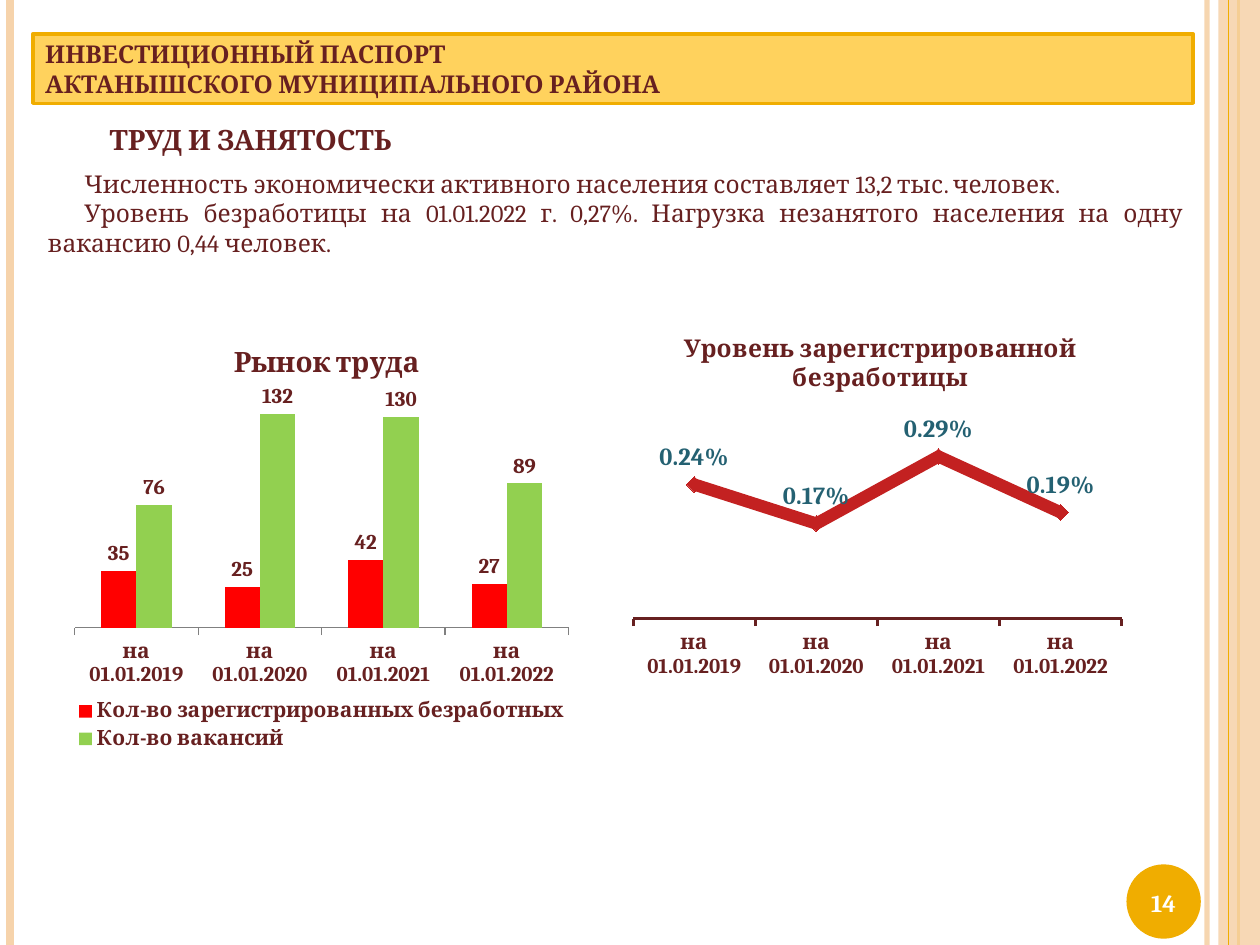
from dataclasses import dataclass

from lxml import etree
from pptx import Presentation
from pptx.chart.data import CategoryChartData
from pptx.dml.color import RGBColor
from pptx.enum.chart import XL_CHART_TYPE, XL_LABEL_POSITION, XL_LEGEND_POSITION, XL_MARKER_STYLE, XL_TICK_MARK
from pptx.enum.shapes import MSO_CONNECTOR, MSO_SHAPE
from pptx.enum.text import MSO_ANCHOR, MSO_AUTO_SIZE, PP_ALIGN
from pptx.oxml.ns import qn
from pptx.util import Inches, Pt

COLUMNS = XL_CHART_TYPE.COLUMN_CLUSTERED
LINE = XL_CHART_TYPE.LINE_MARKERS
OUTSIDE = XL_LABEL_POSITION.OUTSIDE_END
ABOVE = XL_LABEL_POSITION.ABOVE
BOTTOM = XL_LEGEND_POSITION.BOTTOM
DIAMOND = XL_MARKER_STYLE.DIAMOND
TICK_OUT = XL_TICK_MARK.OUTSIDE
STRAIGHT = MSO_CONNECTOR.STRAIGHT
RECTANGLE = MSO_SHAPE.RECTANGLE
OVAL = MSO_SHAPE.OVAL
TOP = MSO_ANCHOR.TOP
MIDDLE = MSO_ANCHOR.MIDDLE
NO_FIT = MSO_AUTO_SIZE.NONE
LEFT = PP_ALIGN.LEFT
CENTER = PP_ALIGN.CENTER
JUSTIFY = PP_ALIGN.JUSTIFY


@dataclass(frozen=True)
class Theme:
    font: str = "Cambria"
    text: str = "672020"
    gold: str = "F0AD00"
    banner: str = "FFD25D"
    peach: str = "F6D3AB"
    white: str = "FFFFFF"
    axis: str = "808080"
    unemployed: str = "FF0000"
    vacancies: str = "92D050"
    rate: str = "C32121"
    rate_label: str = "246172"
    heading_size: float = 16
    body_size: float = 14
    chart_size: float = 12


class SlideBuilder:
    def __init__(self, slide, theme):
        self.slide = slide
        self.theme = theme

    def style_font(self, font, size, color, bold=True):
        font.name = self.theme.font
        font.size = Pt(size)
        font.bold = bold
        font.color.rgb = RGBColor.from_string(color)

    def set_alpha(self, element, percent):
        color = element.find(".//" + qn("a:srgbClr"))
        etree.SubElement(color, qn("a:alpha")).set("val", str(percent * 1000))

    def vertical_line(self, x, color, width, alpha=100):
        line = self.slide.shapes.add_connector(STRAIGHT, Inches(x), 0, Inches(x), Inches(7.5))
        line.line.color.rgb = RGBColor.from_string(color)
        line.line.width = Pt(width)
        properties = line._element.spPr
        if alpha < 100:
            self.set_alpha(properties, alpha)
        etree.SubElement(properties, qn("a:effectLst"))

    def shape(self, kind, frame, fill, outline=None, alpha=100):
        shape = self.slide.shapes.add_shape(kind, *map(Inches, frame))
        shape.shadow.inherit = False
        shape.fill.solid()
        shape.fill.fore_color.rgb = RGBColor.from_string(fill)
        if alpha < 100:
            self.set_alpha(shape._element.spPr, alpha)
        if outline:
            shape.line.color.rgb = RGBColor.from_string(outline)
            shape.line.width = Pt(2)
        else:
            shape.line.fill.background()
        return shape

    def text_box(self, frame):
        return self.slide.shapes.add_textbox(*map(Inches, frame))

    def place(self, placeholder, frame):
        placeholder.left, placeholder.top, placeholder.width, placeholder.height = map(Inches, frame)
        return placeholder

    def set_text(self, box, text, size, color, bold=True, align=LEFT, anchor=MIDDLE, indent=0):
        frame = box.text_frame
        frame.text = text
        frame.word_wrap = True
        frame.auto_size = NO_FIT
        frame.vertical_anchor = anchor
        for para in frame.paragraphs:
            para.alignment = align
            para.space_before = Pt(0)
            properties = para._p.get_or_add_pPr()
            properties.set("marL", "0")
            properties.set("indent", str(Inches(indent)))
            etree.SubElement(properties, qn("a:buNone"))
            for span in para.runs:
                self.style_font(span.font, size, color, bold)

    def set_layout(self, parent, position, bounds, inner=False):
        for old in parent.findall(qn("c:layout")):
            parent.remove(old)
        layout = etree.Element(qn("c:layout"))
        parent.insert(position, layout)
        manual = etree.SubElement(layout, qn("c:manualLayout"))
        settings = [("layoutTarget", "inner")] if inner else []
        settings += [("xMode", "edge"), ("yMode", "edge"), *zip("xywh", bounds)]
        for name, value in settings:
            etree.SubElement(manual, qn("c:" + name)).set("val", str(value))

    def chart(self, kind, frame, title, title_size, categories, series, plot_bounds, top_value, axis_style):
        data = CategoryChartData()
        data.categories = categories
        for name, values in series:
            data.add_series(name, values)
        chart = self.slide.shapes.add_chart(kind, *map(Inches, frame), data).chart
        theme = self.theme
        self.style_font(chart.font, theme.chart_size, theme.text)
        chart.has_title = True
        chart.chart_title.text_frame.text = title
        for span in chart.chart_title.text_frame.paragraphs[0].runs:
            self.style_font(span.font, title_size, theme.text)
        chart.has_legend = False
        chart.value_axis.minimum_scale = 0
        chart.value_axis.maximum_scale = top_value
        chart.value_axis.has_major_gridlines = False
        chart.value_axis.visible = False
        axis = chart.category_axis
        axis.major_tick_mark = TICK_OUT
        self.style_font(axis.tick_labels.font, theme.chart_size, theme.text)
        color, width = axis_style
        axis.format.line.color.rgb = RGBColor.from_string(color)
        axis.format.line.width = Pt(width)
        chart.plots[0].vary_by_categories = False
        self.set_layout(chart._chartSpace.chart.plotArea, 0, plot_bounds, inner=True)
        return chart

    def data_labels(self, series, size, color, position, number_format):
        labels = series.data_labels
        labels.show_value = True
        labels.number_format = number_format
        labels.number_format_is_linked = False
        labels.position = position
        self.style_font(labels.font, size, color)

    def column_chart(self, frame, title, categories, series, colors):
        theme = self.theme
        chart = self.chart(COLUMNS, frame, title, theme.heading_size, categories, series,
                           (0.02, 0.17, 0.94, 0.5), 140, (theme.axis, 0.75))
        chart.plots[0].gap_width = 150
        for column, color in zip(chart.plots[0].series, colors):
            column.format.fill.solid()
            column.format.fill.fore_color.rgb = RGBColor.from_string(color)
            self.data_labels(column, theme.chart_size, theme.text, OUTSIDE, "General")
        chart.has_legend = True
        chart.legend.position = BOTTOM
        chart.legend.include_in_layout = False
        self.style_font(chart.legend.font, theme.chart_size, theme.text)
        self.set_layout(chart.legend._element, 1, (0.02, 0.82, 0.94, 0.13))

    def line_chart(self, frame, title, categories, series, color):
        theme = self.theme
        chart = self.chart(LINE, frame, title, theme.body_size, categories, series,
                           (0.03, 0.29, 0.93, 0.52), 0.0035, (theme.text, 1.75))
        line = chart.plots[0].series[0]
        line.smooth = False
        line.format.line.color.rgb = RGBColor.from_string(color)
        line.format.line.width = Pt(7)
        line.marker.style = DIAMOND
        line.marker.size = 9
        line.marker.format.fill.solid()
        line.marker.format.fill.fore_color.rgb = RGBColor.from_string(color)
        line.marker.format.line.color.rgb = RGBColor.from_string(color)
        self.data_labels(line, theme.body_size, theme.rate_label, ABOVE, "0.00%")


def main():
    deck = Presentation()
    deck.slide_width, deck.slide_height = Inches(10), Inches(7.5)
    theme = Theme()
    page = SlideBuilder(deck.slides.add_slide(deck.slide_layouts[1]), theme)

    page.vertical_line(9.58, theme.peach, 3, alpha=93)
    page.vertical_line(0.08, theme.peach, 4.5)
    page.vertical_line(9.83, theme.gold, 1.5)
    page.shape(RECTANGLE, (9.67, 0, 0.33, 7.5), theme.peach, alpha=87)
    page.vertical_line(9.75, theme.gold, 0.75)

    banner = page.shape(RECTANGLE, (0.26, 0.27, 9.21, 0.55), theme.banner, theme.gold)
    page.set_text(banner, "ИНВЕСТИЦИОННЫЙ ПАСПОРТ\nАКТАНЫШСКОГО МУНИЦИПАЛЬНОГО РАЙОНА", theme.body_size, theme.text)
    page.shape(OVAL, (8.94, 6.86, 0.59, 0.59), theme.gold)
    page.set_text(page.text_box((8.9, 6.88, 0.67, 0.57)), "14", theme.body_size, theme.white, align=CENTER)

    title, body = page.slide.placeholders
    page.set_text(page.place(title, (0.28, 0.92, 9.21, 0.37)), "ТРУД И ЗАНЯТОСТЬ",
                  theme.heading_size, theme.text, align=JUSTIFY, anchor=TOP, indent=0.49)
    page.set_text(page.place(body, (0.28, 1.29, 9.21, 0.81)),
                  "Численность экономически активного населения составляет 13,2 тыс. человек.\n"
                  "Уровень безработицы на 01.01.2022 г. 0,27%. Нагрузка незанятого населения "
                  "на одну вакансию 0,44 человек.",
                  theme.body_size, theme.text, bold=False, align=JUSTIFY, anchor=TOP, indent=0.29)

    dates = [f"на 01.01.{year}" for year in range(2019, 2023)]
    page.column_chart((0.51, 2.57, 4.17, 3.6), "Рынок труда", dates,
                      [("Кол-во зарегистрированных безработных", (35, 25, 42, 27)),
                       ("Кол-во вакансий", (76, 132, 130, 89))],
                      (theme.unemployed, theme.vacancies))
    page.line_chart((4.9, 2.49, 4.17, 2.99), "Уровень зарегистрированной безработицы", dates,
                    [("Series 1", (0.0024, 0.0017, 0.0029, 0.0019))], theme.rate)
    deck.save("out.pptx")


if __name__ == "__main__":
    main()
